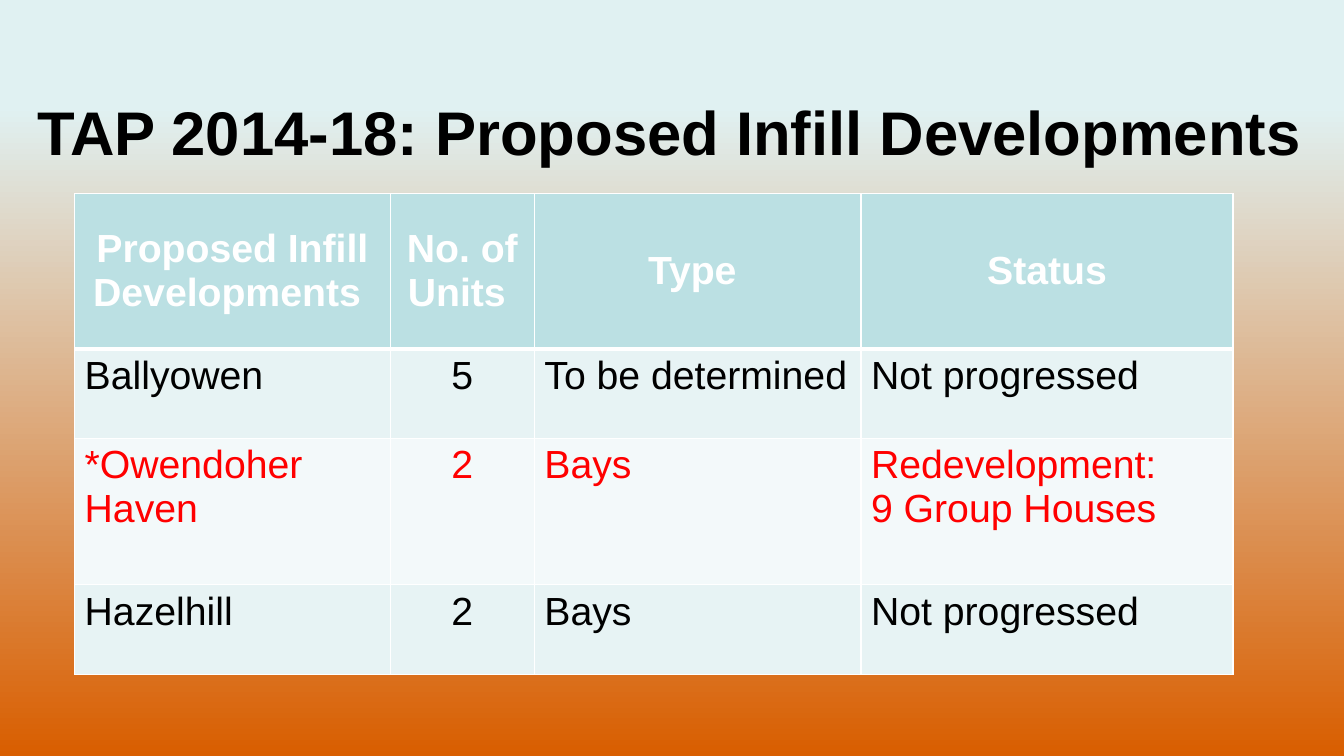
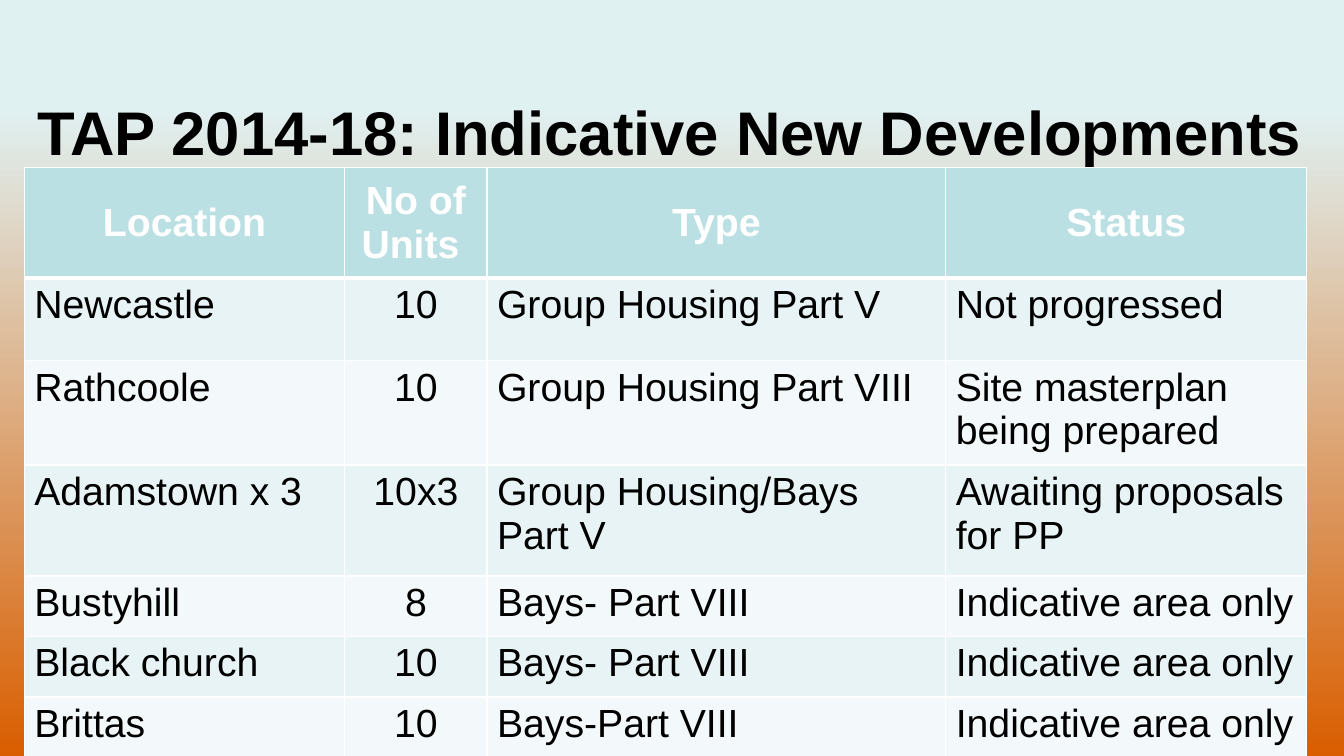
from lxml import etree
from pptx import Presentation, util as u
from pptx.dml.color import RGBColor
from pptx.enum import text as t
from pptx.oxml.ns import qn

HUES = {
    "sky": "E0F1F2", "rust": "D95E00", "head": "BBE0E3", "odd": "E7F3F4",
    "even": "F3F9FA", "white": "FFFFFF", "black": "000000", "red": "FF0000",
}
FONT = "Arial"
MID, TOP = t.MSO_ANCHOR.MIDDLE, t.MSO_ANCHOR.TOP
LEFT, CENTER = t.PP_ALIGN.LEFT, t.PP_ALIGN.CENTER


def write(frame, words, size=28, hue="black", bold=False, align=LEFT, anchor=TOP):
    """Fill a text frame or table cell, one paragraph per line of words."""
    box = getattr(frame, "text_frame", frame)
    box.text = words
    frame.vertical_anchor = anchor
    for para in box.paragraphs:
        para.alignment = align
        font = para.runs[0].font
        font.name, font.size, font.bold = FONT, u.Pt(size), bold
        font.color.rgb = RGBColor.from_string(HUES[hue])


def edge(cell, top, base):
    """Draw white cell borders; top and base are widths in points."""
    props = cell._tc.get_or_add_tcPr()
    for side, width in (("L", 1), ("R", 1), ("T", top), ("B", base)):
        line = etree.SubElement(props, qn("a:ln" + side), w=str(u.Pt(width)))
        fill = etree.SubElement(line, qn("a:solidFill"))
        etree.SubElement(fill, qn("a:srgbClr"), val=HUES["white"])


SLIDES = [
    {
        "title": "TAP 2014-18: Proposed Infill Developments",
        "span": (0.17, 12.95),
        "spot": (0.74, 1.92),
        "cols": [3.13, 1.43, 3.24, 3.69],
        "tall": [1.54, 0.89, 1.45, 0.89],
        "rows": [
            ["Proposed Infill Developments ", "No. of Units ", "Type ", "Status"],
            ["Ballyowen", "5", "To be determined", "Not progressed"],
            ["*Owendoher Haven", "2", "Bays", "Redevelopment:\n9 Group Houses"],
            ["Hazelhill", "2", "Bays", "Not progressed"],
        ],
    },
    {
        "title": "TAP 2014-18: Indicative New Developments",
        "span": (0.24, 12.81),
        "spot": (0.24, 1.66),
        "cols": [3.18, 1.41, 4.55, 3.58],
        "tall": [1.1, 0.82, 0.73, 1.1, 0.6, 0.6, 0.6],
        "rows": [
            ["Location", "No of Units ", "Type", "Status"],
            ["Newcastle", "10", "Group Housing Part V", "Not progressed"],
            ["Rathcoole", "10", "Group Housing Part VIII",
             "Site masterplan being prepared"],
            ["Adamstown x 3", "10x3", "Group Housing/Bays Part V",
             "Awaiting proposals for PP"],
            ["Bustyhill", "8", "Bays- Part VIII", "Indicative area only"],
            ["Black church", "10", "Bays- Part VIII", "Indicative area only"],
            ["Brittas", "10", "Bays-Part VIII", "Indicative area only"],
        ],
    },
]

deck = Presentation()
deck.slide_width, deck.slide_height = u.Inches(13.33), u.Inches(7.5)

back = deck.slide_master.background.fill
back.gradient()
back.gradient_angle = 270
for stop, place, hue in zip(back.gradient_stops, (0.14, 1), ("sky", "rust")):
    stop.position = place
    stop.color.rgb = RGBColor.from_string(HUES[hue])

for page in SLIDES:
    slide = deck.slides.add_slide(deck.slide_layouts[6])

    left, wide = page["span"]
    title = slide.shapes.add_textbox(
        u.Inches(left), u.Inches(0.67), u.Inches(wide), u.Inches(1.25)).text_frame
    title.word_wrap = True
    write(title, page["title"], size=44, bold=True, align=CENTER, anchor=MID)

    rows, cols, tall = page["rows"], page["cols"], page["tall"]
    left, top = page["spot"]
    grid = slide.shapes.add_table(
        len(rows), len(cols), u.Inches(left), u.Inches(top),
        u.Inches(sum(cols)), u.Inches(sum(tall))).table
    for col, wide in zip(grid.columns, cols):
        col.width = u.Inches(wide)

    for r, row in enumerate(rows):
        grid.rows[r].height = u.Inches(tall[r])
        band = "head" if r == 0 else "odd" if r % 2 else "even"
        ink = "red" if row[0].startswith("*") else "black"
        for c, words in enumerate(row):
            cell = grid.cell(r, c)
            edge(cell, top=3 if r == 1 else 1, base=3 if r == 0 else 1)
            cell.fill.solid()
            cell.fill.fore_color.rgb = RGBColor.from_string(HUES[band])
            if r == 0:
                write(cell, words, hue="white", bold=True, align=CENTER, anchor=MID)
            else:
                write(cell, words, hue=ink, align=CENTER if c == 1 else LEFT)

deck.save("out.pptx")
